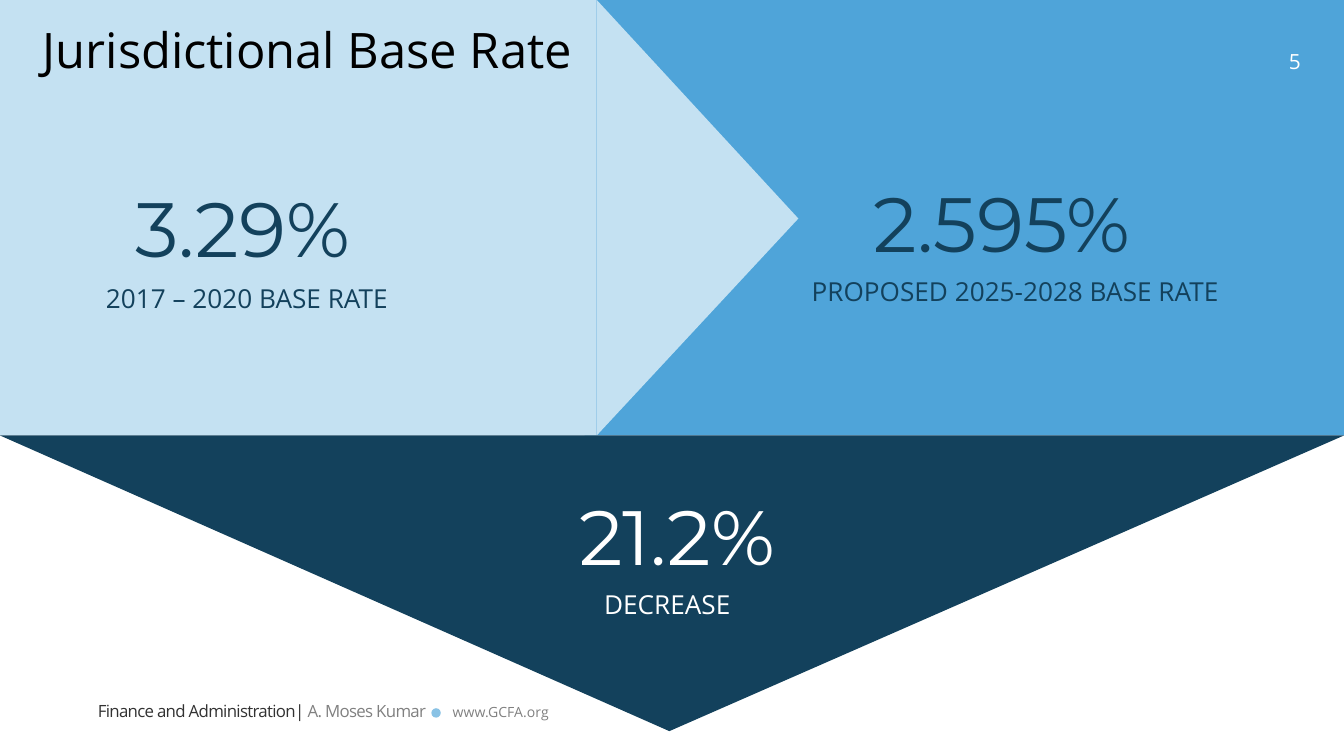
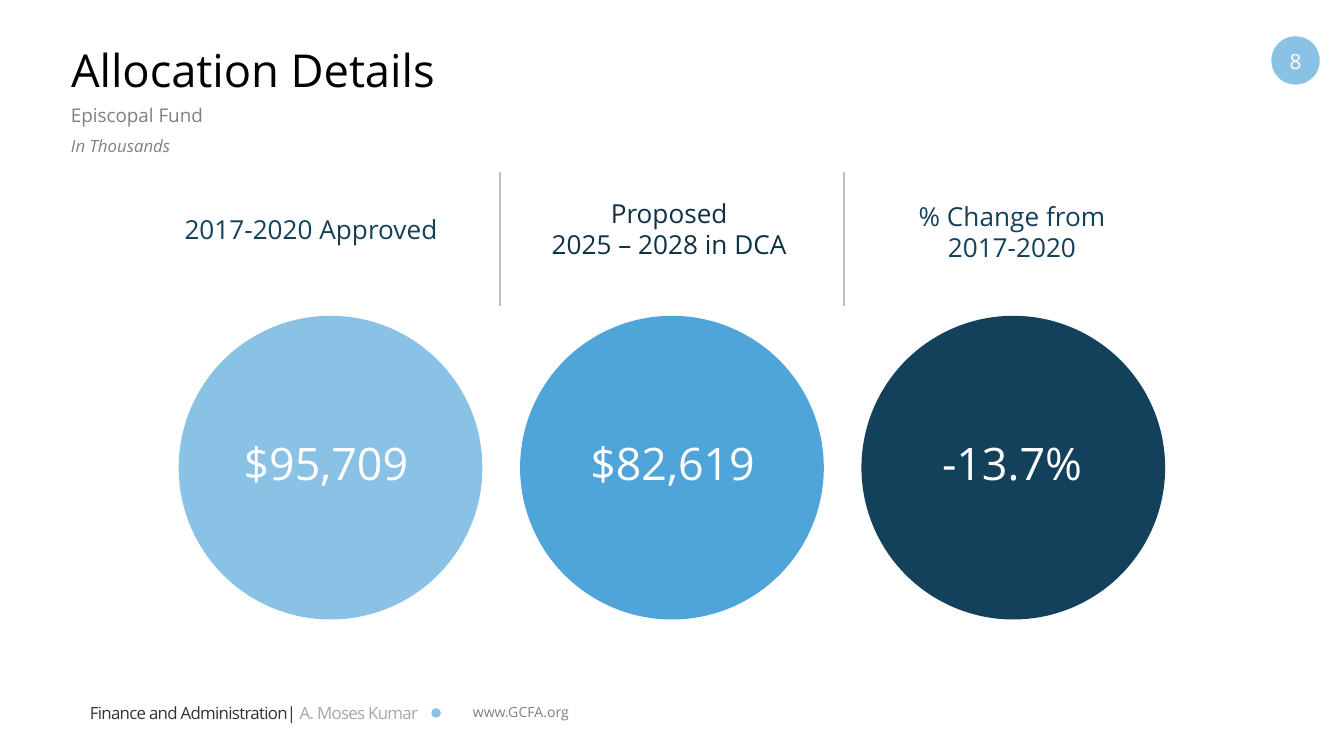
"""Builds two slides on the jurisdictional base rate and the Episcopal Fund allocation."""
from lxml import etree
from pptx import Presentation
from pptx.dml.color import RGBColor
from pptx.enum.shapes import MSO_CONNECTOR, MSO_SHAPE
from pptx.enum.text import MSO_ANCHOR, PP_ALIGN
from pptx.oxml.ns import qn
from pptx.util import Inches, Pt

LEFT, CENTER = PP_ALIGN.LEFT, PP_ALIGN.CENTER
TOP, MIDDLE = MSO_ANCHOR.TOP, MSO_ANCHOR.MIDDLE
RECT, OVAL, TRIANGLE = MSO_SHAPE.RECTANGLE, MSO_SHAPE.OVAL, MSO_SHAPE.ISOSCELES_TRIANGLE
STRAIGHT = MSO_CONNECTOR.STRAIGHT

WIDTH = 10
HEIGHT = WIDTH * 9 / 16
BODY, DISPLAY = "Open Sans", "Montserrat"
COLORS = {
    "pale": "C4E1F2", "sky": "89C2E5", "blue": "4FA4D9", "navy": "13415C",
    "label": "14405A", "deep": "0E3145", "white": "FFFFFF", "black": "000000",
    "ink": "323232", "gray": "808080", "silver": "A6A6A6", "rule": "BFBFBF",
}

DEPARTMENT, OFFICER, SITE = "Finance and Administration| ", "A. Moses Kumar", "www.GCFA.org"

BASE_RATE = {
    "title": "Jurisdictional Base Rate", "title_at": (0.22, 0.14), "title_size": 26.2,
    "page": "5", "page_at": (9.37, 0.53),
    "department_at": (0.63, 5.19, 3.11, 0.2), "site_left": 3.27, "officer_color": "gray",
}
RATES = [
    ("3.29%", (0.91, 1.44, 2.06), "2017 – 2020 BASE RATE", (0.69, 2.05, 2.31),
     "navy", LEFT, False),
    ("2.595%", (6.4, 1.4, 2.38), "PROPOSED 2025-2028 BASE RATE", (5.94, 2, 3.25),
     "navy", LEFT, False),
    ("21.2%", (2.4, 3.73, 5.28), "DECREASE", (3.35, 4.33, 3.23), "white", CENTER, True),
]

ALLOCATION = {
    "title": "Allocation Details", "title_at": (0.43, 0.29), "title_size": 24.3,
    "page": "8", "page_at": (9.44, 0.4),
    "department_at": (0.57, 5.19, 2.85, 0.23), "site_left": 3.42, "officer_color": "silver",
}
FUND, UNIT = "Episcopal Fund", "In Thousands"
COLUMNS = [
    (["2017-2020 Approved"], (1.21, 1.54, 2.21, 0.34), "label", "$95,709", (1.32, 2.21), "sky"),
    (["Proposed", "2025 – 2028 in DCA"], (3.85, 1.42, 2.26, 0.57), "deep",
     "$82,619", (3.99, 2.03), "blue"),
    (["% Change from 2017-2020"], (6.52, 1.44, 2.02, 0.57), "label",
     "-13.7%", (6.52, 2.02), "navy"),
]
CIRCLE, CIRCLE_STEP, CIRCLE_TOP = 2.26, 2.54, 2.35
CIRCLE_LEFT = (WIDTH - CIRCLE) / 2 - CIRCLE_STEP
RULE_LEFT, RULE_STEP, RULE_TOP, RULE_BOTTOM = 3.72, 2.56, 1.28, 2.28
BAND_HEIGHT, SPLIT, ARROW_DEPTH = 3.24, 4.44, 1.5
DECREASE_DEPTH, TIP = 2.2, 0.502


def rgb(color):
    return RGBColor.from_string(COLORS[color])


def style(font, size, color, family=BODY):
    font.size, font.name = Pt(size), family
    font.color.rgb = rgb(color)


def add_text(slide, at, lines, size, color, align=LEFT, anchor=TOP, wrap=True,
             family=BODY, spacing=None):
    frame = slide.shapes.add_textbox(*map(Inches, at)).text_frame
    frame.word_wrap, frame.vertical_anchor = wrap, anchor
    for index, line in enumerate(lines):
        paragraph = frame.paragraphs[0] if index == 0 else frame.add_paragraph()
        paragraph.text, paragraph.alignment = line, align
        paragraph.line_spacing = spacing
        style(paragraph.font, size, color, family)
    return frame


def add_block(slide, preset, at, color, rotation=0):
    block = slide.shapes.add_shape(preset, *map(Inches, at))
    block.shadow.inherit = False
    block.fill.solid()
    block.fill.fore_color.rgb = rgb(color)
    block.line.fill.background()
    block.rotation = rotation
    if preset == TRIANGLE:
        block.adjustments[0] = TIP


def add_rule(slide, x):
    rule = slide.shapes.add_connector(
        STRAIGHT, Inches(x), Inches(RULE_TOP), Inches(x), Inches(RULE_BOTTOM))
    rule.line.color.rgb, rule.line.width = rgb("rule"), Pt(1)
    etree.SubElement(rule._element.spPr, qn("a:effectLst"))


def add_title(slide, content):
    add_text(slide, (*content["title_at"], 8.62, 0.5), [content["title"]],
             content["title_size"], "black", anchor=MIDDLE, spacing=0.9)


def add_footer(slide, content):
    add_block(slide, OVAL, (3.21, 5.27, 0.07, 0.07), "sky")
    add_text(slide, (content["site_left"], 5.21, 1.26, 0.17), [SITE], 7.5, "gray", anchor=MIDDLE)
    frame = add_text(slide, content["department_at"], [""], 9, "ink", anchor=MIDDLE)
    for words, color in ((DEPARTMENT, "ink"), (OFFICER, content["officer_color"])):
        run = frame.paragraphs[0].add_run()
        run.text = words
        style(run.font, 9, color)
        run.font._element.set("spc", "-38")


def add_page_number(slide, content):
    left, width = content["page_at"]
    add_text(slide, (left, 0.34, width, 0.23), [content["page"]], 11.2, "white", CENTER, MIDDLE)


def build_base_rate(slide):
    add_block(slide, RECT, (4.35, 0, WIDTH - 4.35, BAND_HEIGHT), "blue")
    add_footer(slide, BASE_RATE)
    add_page_number(slide, BASE_RATE)
    add_block(slide, RECT, (0, 0, SPLIT, BAND_HEIGHT), "pale")
    arrow_left = SPLIT + (ARROW_DEPTH - BAND_HEIGHT) / 2
    arrow_top = (BAND_HEIGHT - ARROW_DEPTH) / 2
    add_block(slide, TRIANGLE, (arrow_left, arrow_top, BAND_HEIGHT, ARROW_DEPTH), "pale", 90)
    add_block(slide, TRIANGLE, (0, BAND_HEIGHT, WIDTH, DECREASE_DEPTH), "navy", 180)
    for rate, rate_at, label, label_at, color, align, wrap in RATES:
        add_text(slide, (*rate_at, 0.53), [rate], 41.2, color, align,
                 family=DISPLAY, spacing=Pt(39))
        add_text(slide, (*label_at, 0.34), [label], 14, color, align, wrap=wrap)
    add_title(slide, BASE_RATE)


def build_allocation(slide):
    add_block(slide, OVAL, (9.46, 0.27, 0.36, 0.36), "sky")
    add_title(slide, ALLOCATION)
    add_footer(slide, ALLOCATION)
    add_page_number(slide, ALLOCATION)
    for index, (heading, heading_at, color, amount, (left, width), fill) in enumerate(COLUMNS):
        circle_left = CIRCLE_LEFT + index * CIRCLE_STEP
        add_block(slide, OVAL, (circle_left, CIRCLE_TOP, CIRCLE, CIRCLE), fill)
        add_text(slide, heading_at, heading, 14, color, CENTER)
        add_text(slide, (left, 3.19, width, 0.5), [amount], 24, "white", CENTER)
    for index in range(len(COLUMNS) - 1):
        add_rule(slide, RULE_LEFT + index * RULE_STEP)
    fund = add_text(slide, (0.43, 0.72, 8.77, 0.47), [FUND, UNIT], 10.1, "gray")
    unit = fund.paragraphs[1]
    unit.font.size, unit.font.italic, unit.line_spacing = Pt(9), True, 1.5


def main():
    deck = Presentation()
    deck.slide_width, deck.slide_height = Inches(WIDTH), Inches(HEIGHT)
    for build in (build_base_rate, build_allocation):
        build(deck.slides.add_slide(deck.slide_layouts[6]))
    deck.save("out.pptx")


if __name__ == "__main__":
    main()
